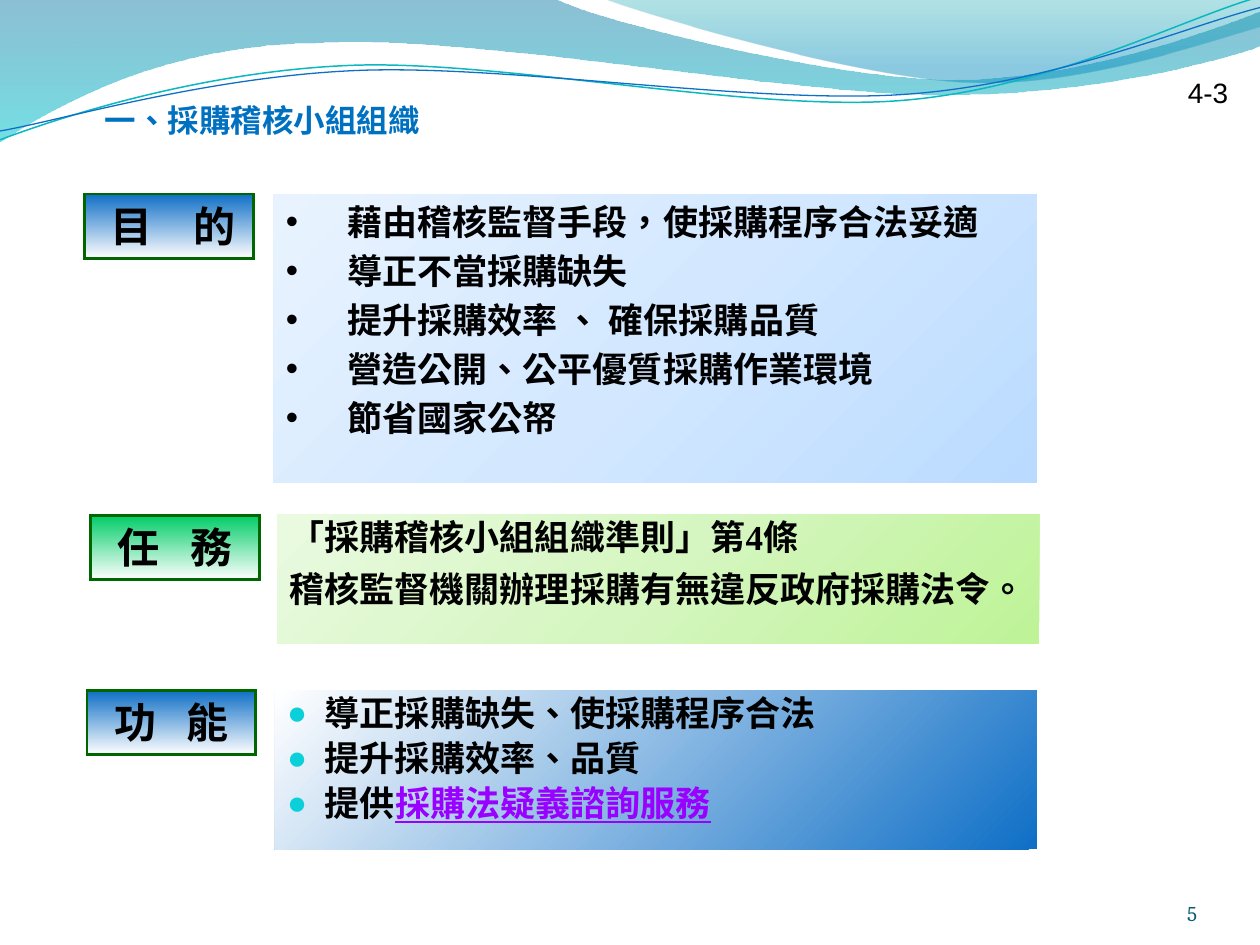
from lxml import etree
from pptx import Presentation
from pptx.dml.color import RGBColor
from pptx.enum.lang import MSO_LANGUAGE_ID as LANGUAGE
from pptx.enum.shapes import MSO_SHAPE
from pptx.enum.text import MSO_ANCHOR, PP_ALIGN
from pptx.oxml import parse_xml
from pptx.oxml.ns import nsdecls, qn
from pptx.util import Inches, Pt

COLORS = {
    "black": "000000", "title": "0070C0", "number": "045D75", "link": "9900FF",
    "blue": "0F6FC6", "green": "00CC66", "white": "FFFFFF", "border": "006600",
    "bullet": "0BD0D9", "teal_line": "0AB8BF",
}
SERIF, SANS, BODY, CJK = "Times New Roman", "Arial", "Cambria", "Noto Sans CJK SC"
PALE_BLUE = [(0, "BADBFF"), (50, "D3E8FF"), (100, "E9F3FF")]
PALE_GREEN = [(0, "BEF397"), (50, "D5F6C0"), (100, "EAFAE0")]
BLUE_FADE = [(0, COLORS["blue"]), (100, COLORS["white"])]
GREEN_FADE = [(0, COLORS["green"]), (100, COLORS["white"])]

# Each wave is a start point followed by segments: 2 numbers a line, 6 a curve.
BROAD_WAVE = [
    (0, -0.01), (4.4, -0.01), (4.76, 0.17, 6.64, 0.63, 7.58, 0.63),
    (8.53, 0.63, 9.58, 0.26, 10, 0.09), (10.01, 0.36),
    (9.83, 0.44, 8.7, 0.76, 7.46, 0.75), (6.22, 0.75, 3.82, 0.28, 2.57, 0.34),
    (1.29, 0.35, 0.46, 0.83, -0.01, 1.13), (0, -0.01),
]
RIGHT_WAVE = [
    (4.79, -0.01), (5.09, 0.11, 6.82, 0.62, 7.69, 0.65),
    (8.56, 0.69, 9.61, 0.32, 10, 0.21), (10, 0), (4.79, -0.01),
]
TEAL_CURVE = [
    (0, 1.11), (0.48, 0.93, 1.58, 0.57, 2.77, 0.52),
    (3.95, 0.47, 5.93, 0.89, 7.13, 0.8), (8.33, 0.71, 9.38, 0.15, 9.98, -0.02),
]
BLUE_CURVE = [
    (0, 1.04), (0.47, 0.96, 1.64, 0.61, 2.83, 0.56),
    (4.03, 0.51, 5.97, 0.83, 7.17, 0.75), (8.36, 0.67, 9.41, 0.21, 10, 0.06),
]


def rgb(name):
    return RGBColor.from_string(COLORS[name])


def fill_gradient(shape, stops, angle):
    """Fill with (position, colour[, opacity]) stops, all in percent."""
    grad = parse_xml(f'<a:gradFill {nsdecls("a")} rotWithShape="1"><a:gsLst/>'
                     f'<a:lin ang="{angle * 60000}" scaled="1"/></a:gradFill>')
    for position, color, *opacity in stops:
        stop = etree.SubElement(grad[0], qn("a:gs"), pos=str(position * 1000))
        tint = etree.SubElement(stop, qn("a:srgbClr"), val=color)
        if opacity:
            etree.SubElement(tint, qn("a:alpha"), val=str(opacity[0] * 1000))
    shape.fill.background()
    props = shape.fill._xPr
    props.replace(props.find(qn("a:noFill")), grad)


def bend(wave, segments):
    """Turn the straight segments of a freeform into its cubic curves."""
    outline = wave._element.find(".//" + qn("a:path"))
    for line, segment in zip(outline.findall(qn("a:lnTo")), segments[1:]):
        if len(segment) == 6:
            curve = etree.Element(qn("a:cubicBezTo"))
            for x, y in zip(segment[::2], segment[1::2]):
                etree.SubElement(curve, qn("a:pt"), x=str(Inches(x) - wave.left),
                                 y=str(Inches(y) - wave.top))
            outline.replace(line, curve)


def add_wave(slide, segments, stops=None, line=None, width=0):
    points = [(Inches(segment[-2]), Inches(segment[-1])) for segment in segments]
    builder = slide.shapes.build_freeform(*points[0])
    builder.add_line_segments(points[1:], close=bool(stops))
    wave = builder.convert_to_shape()
    bend(wave, segments)
    wave.shadow.inherit = False
    if stops:
        fill_gradient(wave, stops, 90)
        wave.line.fill.background()
    else:
        wave.fill.background()
        wave.line.color.rgb = rgb(line)
        wave.line.width = Pt(width)


def add_header(slide):
    add_wave(slide, BROAD_WAVE, [(0, "0074A1", 45), (100, "00C6CF", 55)])
    add_wave(slide, RIGHT_WAVE, [(0, "00A1A9", 30), (80, "008BBF", 45)])
    add_wave(slide, TEAL_CURVE, line="teal_line", width=0.85)
    add_wave(slide, BLUE_CURVE, line="blue", width=0.75)


def add_span(para, text, size, font, color="black", bold=True):
    span = para.add_run()
    span.text = text
    span.font.size, span.font.name, span.font.bold = Pt(size), font, bold
    span.font.color.rgb = rgb(color)
    span.font.language_id = LANGUAGE.TRADITIONAL_CHINESE
    return span


def place(shape, box):
    shape.left, shape.top, shape.width, shape.height = map(Inches, box)


def set_margins(frame, left, top, right, bottom):
    frame.margin_left, frame.margin_top = Inches(left), Inches(top)
    frame.margin_right, frame.margin_bottom = Inches(right), Inches(bottom)


def add_title(slide, box, text):
    title = slide.shapes.title
    place(title, box)
    frame = title.text_frame
    frame.vertical_anchor = MSO_ANCHOR.BOTTOM
    set_margins(frame, 0, 0.05, 0, 0)
    para = frame.paragraphs[0]
    para.alignment = PP_ALIGN.LEFT
    span = add_span(para, text, 18, CJK, "title")
    etree.SubElement(span.font._element, qn("a:ea"), typeface=CJK)


def add_note(slide, box, text, size, font, color="black"):
    note = slide.shapes.add_textbox(*map(Inches, box))
    add_span(note.text_frame.paragraphs[0], text, size, font, color, bold=False)
    return note.text_frame


def add_panel(slide, box, stops, angle):
    panel = slide.shapes.add_shape(MSO_SHAPE.RECTANGLE, *map(Inches, box))
    panel.shadow.inherit = False
    panel.line.fill.background()
    fill_gradient(panel, stops, angle)
    panel.text_frame.word_wrap = True
    panel.text_frame.vertical_anchor = MSO_ANCHOR.TOP
    return panel


def add_label(slide, left, top, text, gap, stops, shift=0):
    """Add a bordered caption whose space is widened by a gap in points."""
    label = add_panel(slide, (left, top, 1.34, 0.51), stops, 90)
    label.line.color.rgb = rgb("border")
    label.line.width = Pt(1.5)
    etree.SubElement(label.line._ln, qn("a:miter"), lim="800000")
    set_margins(label.text_frame, 0.1 + shift, 0.05, 0.1, 0.05)
    para = label.text_frame.paragraphs[0]
    para.alignment = PP_ALIGN.CENTER
    for part in text.partition(" "):
        span = add_span(para, part, 24, SERIF)
        if part == " ":
            span.font._element.set("spc", str(gap * 100))


def set_bullet(para, mark, indent, color=None, size=100):
    props = para._p.get_or_add_pPr()
    props.set("marL", str(Inches(indent)))
    props.set("indent", str(-Inches(indent)))
    if color:
        tint = etree.SubElement(props, qn("a:buClr"))
        etree.SubElement(tint, qn("a:srgbClr"), val=COLORS[color])
    etree.SubElement(props, qn("a:buSzPct"), val=str(size * 1000))
    etree.SubElement(props, qn("a:buFont"), typeface=SANS)
    etree.SubElement(props, qn("a:buChar"), char=mark)


def add_content(slide, box, stops, lines, font, spacing=1.0, gap=4, bullet=None):
    """Add a panel of lines; each line is a list of (text, colour) spans."""
    frame = add_panel(slide, box, stops, 225).text_frame
    for index, spans in enumerate(lines):
        para = frame.add_paragraph() if index else frame.paragraphs[0]
        para.alignment = PP_ALIGN.LEFT
        para.line_spacing = spacing
        para.space_before = Pt(gap)
        if bullet:
            set_bullet(para, **bullet)
        for text, color in spans:
            add_span(para, text, 20, font, color).font.underline = color == "link" or None


def plain(*lines):
    return [[(line, "black")] for line in lines]


def main():
    deck = Presentation()
    deck.slide_width, deck.slide_height = Inches(10), Inches(7.5)
    slide = deck.slides.add_slide(deck.slide_layouts[5])
    add_header(slide)
    add_title(slide, (0.83, 0.73, 2.91, 0.37), "一、採購稽核小組組織")
    add_note(slide, (9.33, 0.55, 0.53, 0.37), "4-3", 16, SANS)

    add_label(slide, 0.67, 1.54, "目 的", 18, BLUE_FADE, shift=0.06)
    add_content(slide, (2.17, 1.54, 6.06, 2.29), PALE_BLUE, plain(
        "藉由稽核監督手段，使採購程序合法妥適", "導正不當採購缺失",
        "提升採購效率 、 確保採購品質", "營造公開、公平優質採購作業環境",
        "節省國家公帑"), SERIF, bullet={"mark": "•", "indent": 0.49})

    add_label(slide, 0.72, 4.09, "任 務", 12, GREEN_FADE)
    add_content(slide, (2.2, 4.08, 6.05, 1.03), PALE_GREEN, plain(
        "「採購稽核小組組織準則」第4條", "稽核監督機關辦理採購有無違反政府採購法令。"),
        SERIF, spacing=0.9, gap=8)

    add_label(slide, 0.69, 5.48, "功 能", 12, BLUE_FADE)
    functions = plain("導正採購缺失、使採購程序合法", "提升採購效率、品質", "提供")
    functions[-1].append(("採購法疑義諮詢服務", "link"))
    add_content(slide, (2.18, 5.48, 6.05, 1.26), BLUE_FADE, functions, BODY, spacing=0.9,
                bullet={"mark": "●", "indent": 0.3, "color": "bullet", "size": 95})

    number = add_note(slide, (8.67, 6.95, 0.83, 0.4), "5", 12, BODY, "number")
    set_margins(number, 0, 0, 0, 0)
    number.word_wrap = True
    number.vertical_anchor = MSO_ANCHOR.BOTTOM
    number.paragraphs[0].alignment = PP_ALIGN.RIGHT
    deck.save("out.pptx")


if __name__ == "__main__":
    main()
